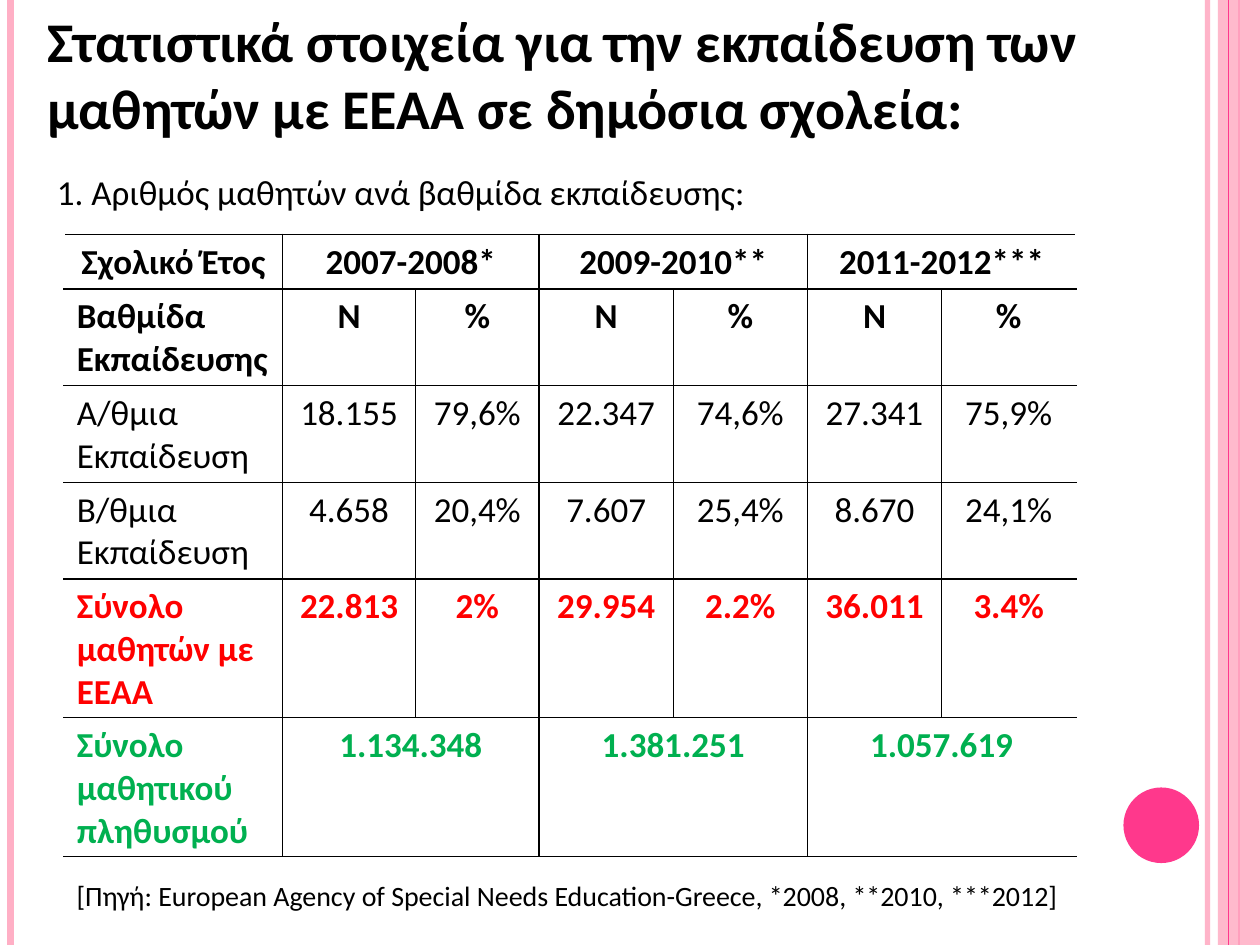
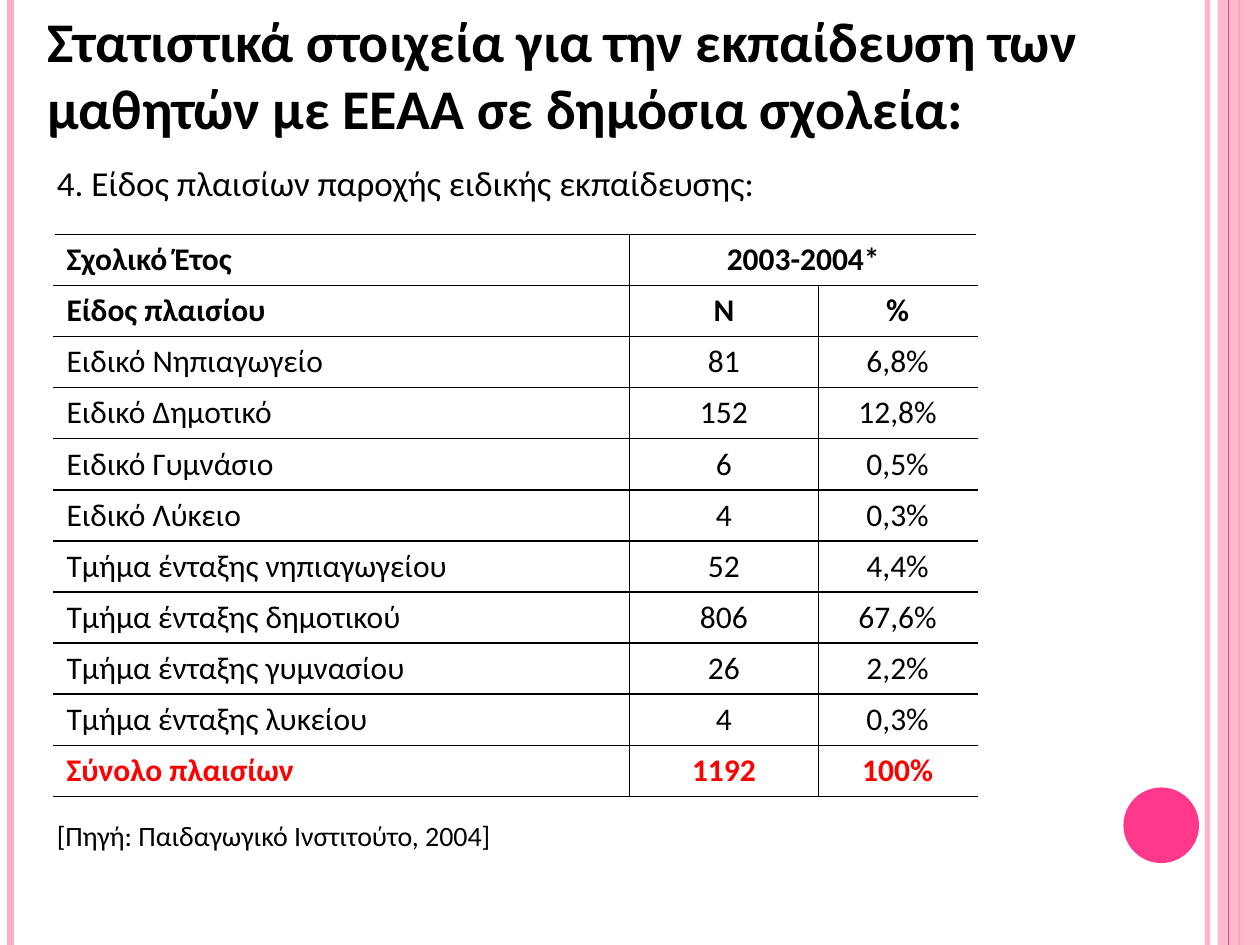
from lxml import etree
from pptx import Presentation
from pptx.dml.color import RGBColor
from pptx.enum.shapes import MSO_CONNECTOR, MSO_SHAPE
from pptx.enum.text import PP_ALIGN
from pptx.oxml.ns import qn
from pptx.util import Pt

STRAIGHT = MSO_CONNECTOR.STRAIGHT
RECTANGLE, OVAL = MSO_SHAPE.RECTANGLE, MSO_SHAPE.OVAL
LEFT, CENTER = PP_ALIGN.LEFT, PP_ALIGN.CENTER

PAGE_WIDTH, PAGE_HEIGHT = 720, 540
TEXT_WIDTH = 657.4
FONT = "Calibri"
BLACK, WHITE, RED, GREEN = "000000", "FFFFFF", "FF0000", "00B050"
PALE_PINK, HOT_PINK = "FFAFC5", "FF388C"
TITLE = "Στατιστικά στοιχεία για την εκπαίδευση των μαθητών με ΕΕΑΑ σε δημόσια σχολεία:"

HEADING = {"bold": True}
PLAIN = {}
RED_TOTAL = {"bold": True, "color": RED}
GREEN_TOTAL = {"bold": True, "color": GREEN}

# None continues the cell on its left.
PUPIL_ROWS = [
    (HEADING, ["Σχολικό Έτος", "2007-2008*", None, "2009-2010**", None, "2011-2012***", None]),
    (HEADING, ["Βαθμίδα Εκπαίδευσης"] + ["Ν", "%"] * 3),
    (PLAIN, ["Α/θμια Εκπαίδευση", "18.155", "79,6%", "22.347", "74,6%", "27.341", "75,9%"]),
    (PLAIN, ["Β/θμια Εκπαίδευση", "4.658", "20,4%", "7.607", "25,4%", "8.670", "24,1%"]),
    (RED_TOTAL, ["Σύνολο μαθητών με ΕΕΑΑ", "22.813", "2%", "29.954", "2.2%", "36.011", "3.4%"]),
    (GREEN_TOTAL, ["Σύνολο μαθητικού πληθυσμού", "1.134.348", None, "1.381.251", None,
                   "1.057.619", None]),
]
SETTING_ROWS = [
    (HEADING, ["Σχολικό Έτος", "2003-2004*", None]),
    (HEADING, ["Είδος πλαισίου", "Ν", "%"]),
    (PLAIN, ["Ειδικό Νηπιαγωγείο", "81", "6,8%"]),
    (PLAIN, ["Ειδικό Δημοτικό", "152", "12,8%"]),
    (PLAIN, ["Ειδικό Γυμνάσιο", "6", "0,5%"]),
    (PLAIN, ["Ειδικό Λύκειο", "4", "0,3%"]),
    (PLAIN, ["Τμήμα ένταξης νηπιαγωγείου", "52", "4,4%"]),
    (PLAIN, ["Τμήμα ένταξης δημοτικού", "806", "67,6%"]),
    (PLAIN, ["Τμήμα ένταξης γυμνασίου", "26", "2,2%"]),
    (PLAIN, ["Τμήμα ένταξης λυκείου", "4", "0,3%"]),
    (RED_TOTAL, ["Σύνολο πλαισίων", "1192", "100%"]),
]


def rgb(color):
    """Turn a hex string into a colour."""
    return RGBColor.from_string(color)


def write(frame, text, size=20, color=BLACK, bold=False, align=LEFT):
    """Put formatted text into the first paragraph of a text frame."""
    para = frame.paragraphs[0]
    para.alignment = align
    span = para.add_run()
    span.text = text
    span.font.name = FONT
    span.font.size = Pt(size)
    span.font.bold = bold
    span.font.color.rgb = rgb(color)


def add_text(page, left, top, height, text, **text_format):
    """Add a wrapping text box of the common width."""
    box = page.shapes.add_textbox(Pt(left), Pt(top), Pt(TEXT_WIDTH), Pt(height))
    box.text_frame.word_wrap = True
    write(box.text_frame, text, **text_format)


def set_opacity(shape, percent):
    """Make the explicit colours of a shape partly transparent."""
    for color in shape.element.iter(qn("a:srgbClr")):
        etree.SubElement(color, qn("a:alpha"), val=str(percent * 1000))


def add_stripe(page, x, weight, color, opacity=100):
    """Draw a vertical line over the whole page height."""
    stripe = page.shapes.add_connector(STRAIGHT, Pt(x), Pt(0), Pt(x), Pt(PAGE_HEIGHT))
    stripe.line.width = Pt(weight)
    stripe.line.color.rgb = rgb(color)
    etree.SubElement(stripe.element.spPr, qn("a:effectLst"))
    if opacity < 100:
        set_opacity(stripe, opacity)


def add_filled(page, kind, left, top, width, height, color, opacity=100):
    """Add a filled shape without outline."""
    shape = page.shapes.add_shape(kind, Pt(left), Pt(top), Pt(width), Pt(height))
    shape.shadow.inherit = False
    shape.fill.solid()
    shape.fill.fore_color.rgb = rgb(color)
    shape.line.fill.background()
    if opacity < 100:
        set_opacity(shape, opacity)


def set_borders(cell, **colors):
    """Give the cell sides L, R, T and B one-point lines."""
    properties = cell._tc.get_or_add_tcPr()
    for side, color in colors.items():
        line = etree.SubElement(properties, qn(f"a:ln{side}"), w=str(Pt(1)))
        fill = etree.SubElement(line, qn("a:solidFill"))
        etree.SubElement(fill, qn("a:srgbClr"), val=color)


def add_grid(page, left, top, widths, heights, rows, size, corner_align=LEFT):
    """Add a ruled table that is open at its left and right sides."""
    table = page.shapes.add_table(len(rows), len(widths), Pt(left), Pt(top),
                                  Pt(sum(widths)), Pt(sum(heights))).table
    table.first_row = table.horz_banding = False
    for column, width in zip(table.columns, widths):
        column.width = Pt(width)
    for row, height in zip(table.rows, heights):
        row.height = Pt(height)
    last = len(widths) - 1
    for r, (style, texts) in enumerate(rows):
        for c, text in enumerate(texts):
            cell = table.cell(r, c)
            spans_next = c < last and texts[c + 1] is None
            set_borders(cell, L=BLACK if c else WHITE,
                        R=WHITE if c + spans_next == last else BLACK, T=BLACK, B=BLACK)
            cell.fill.background()
            if spans_next:
                cell.merge(table.cell(r, c + 1))
            if text is not None:
                align = CENTER if c else corner_align if r == 0 else LEFT
                write(cell.text_frame, text, size=size, align=align, **style)


def add_page(deck):
    """Add a blank page with the pink bands and the shared title."""
    page = deck.slides.add_slide(deck.slide_layouts[6])
    add_stripe(page, 690, 3, PALE_PINK, opacity=93)
    add_stripe(page, 6, 4.5, PALE_PINK)
    add_stripe(page, 708, 1.5, HOT_PINK)
    add_filled(page, RECTANGLE, 696, 0, 24, PAGE_HEIGHT, PALE_PINK, opacity=87)
    add_stripe(page, 702, 0.75, HOT_PINK)
    add_filled(page, OVAL, 642, 450, 43.2, 43.2, HOT_PINK)
    add_text(page, 20, 0, 85, TITLE, size=32, bold=True)
    return page


def main():
    """Build the two pages and save the deck."""
    deck = Presentation()
    deck.slide_width, deck.slide_height = Pt(PAGE_WIDTH), Pt(PAGE_HEIGHT)

    pupils = add_page(deck)
    add_grid(pupils, 36.7, 133.9, [124.8, 76, 70.6] + [76.7] * 4,
             [31.2] + [55.2] * 3 + [79.2] * 2, PUPIL_ROWS, size=20, corner_align=CENTER)
    add_text(pupils, 25.4, 93.6, 31.5, "1. Αριθμός μαθητών ανά βαθμίδα εκπαίδευσης:")
    add_text(pupils, 36.7, 498.4, 26.6,
             "[Πηγή: European Agency of Special Needs Education-Greece, *2008, **2010, ***2012]",
             size=16)

    settings = add_page(deck)
    add_text(settings, 25.4, 88.8, 31.5, "4. Είδος πλαισίων παροχής ειδικής εκπαίδευσης:")
    add_grid(settings, 30.8, 133.9, [329, 107.8, 90.7],
             [29.2] * len(SETTING_ROWS), SETTING_ROWS, size=18)
    add_text(settings, 25.4, 464.4, 26.6, "[Πηγή: Παιδαγωγικό Ινστιτούτο, 2004]", size=16)

    deck.save("out.pptx")


if __name__ == "__main__":
    main()
